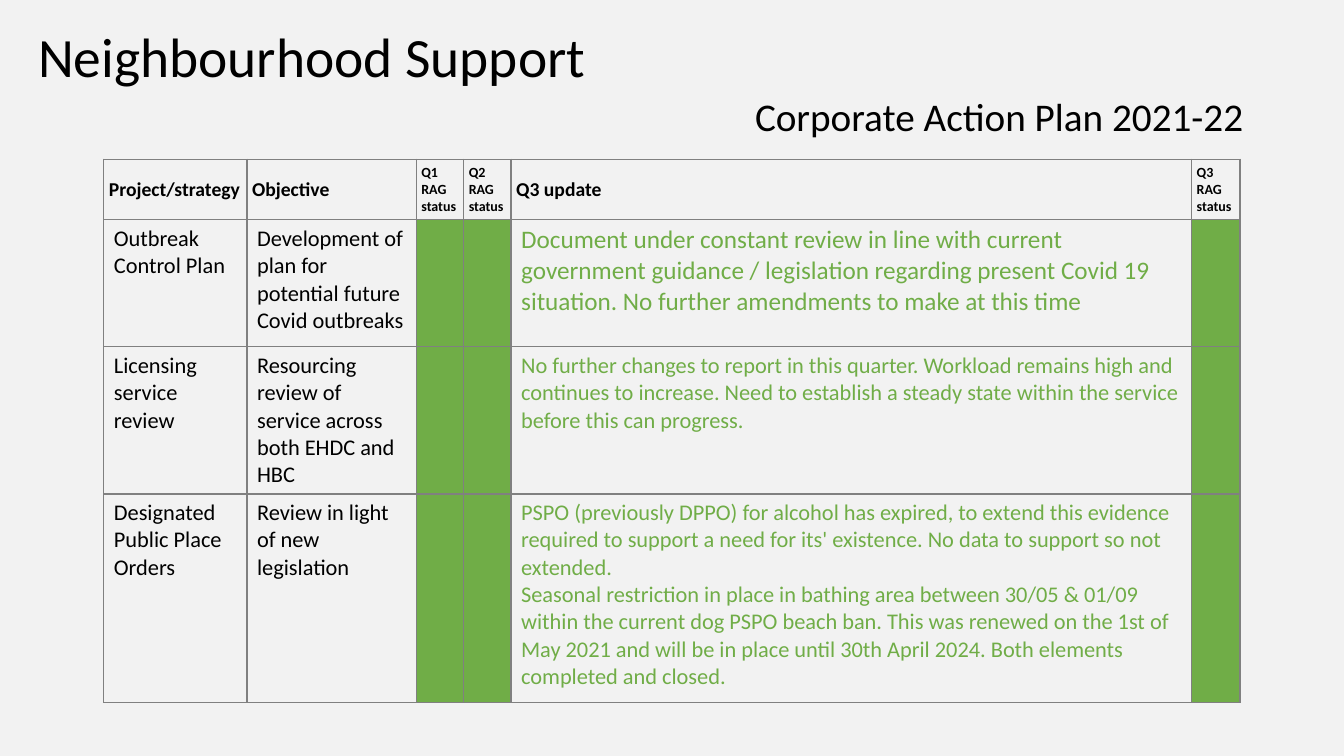
"""Build the Neighbourhood Support action plan slide."""
from lxml.etree import SubElement
from pptx import Presentation
from pptx.dml.color import RGBColor
from pptx.enum.text import MSO_ANCHOR
from pptx.oxml.ns import qn
from pptx.util import Inches, Pt

BLACK, GREEN, GREY, PALE = "000000", "70AD47", "808080", "F2F2F2"
COLUMN_WIDTHS = [1.42, 1.68, 0.47, 0.47, 6.75, 0.48]
ROW_HEIGHTS = [0.6, 1.26, 1.46, 2.07]
HEADINGS = [
    ("Project/strategy", 14), ("Objective", 14), ("Q1 RAG status", 10),
    ("Q2 RAG status", 10), ("Q3 update", 14), ("Q3 RAG status", 10),
]
PROJECTS = [
    ("Outbreak Control Plan",
     "Development of plan for potential future Covid outbreaks",
     ["Document under constant review in line with current government guidance / "
      "legislation regarding present Covid 19 situation. No further amendments to "
      "make at this time"], 18),
    ("Licensing service review",
     "Resourcing review of service across both EHDC and HBC",
     ["No further changes to report in this quarter. Workload remains high and "
      "continues to increase. Need to establish a steady state within the service "
      "before this can progress."], 16),
    ("Designated Public Place Orders",
     "Review in light of new legislation",
     ["PSPO (previously DPPO) for alcohol has expired, to extend this evidence "
      "required to support a need for its' existence. No data to support so not "
      "extended.",
      "Seasonal restriction in place in bathing area between 30/05 & 01/09 within "
      "the current dog PSPO beach ban. This was renewed on the 1st of May 2021 and "
      "will be in place until 30th April 2024. Both elements completed and closed."],
     16),
]


def color(value):
    return RGBColor.from_string(value)


class SlideBuilder:
    def __init__(self, slide, font):
        self.slide = slide
        self.font = font

    def background(self, value):
        fill = self.slide.background.fill
        fill.solid()
        fill.fore_color.rgb = color(value)

    def add_text(self, frame, lines, size, value=BLACK, bold=False, spacing=None):
        frame.word_wrap = True
        for index, line in enumerate(lines):
            para = frame.add_paragraph() if index else frame.paragraphs[0]
            para.line_spacing = spacing
            span = para.add_run()
            span.text = line
            span.font.name = self.font
            span.font.size = Pt(size)
            span.font.bold = bold
            span.font.color.rgb = color(value)

    def heading(self, text, left, top, width, height, size):
        box = self.slide.shapes.add_textbox(
            Inches(left), Inches(top), Inches(width), Inches(height))
        box.text_frame.vertical_anchor = MSO_ANCHOR.BOTTOM
        self.add_text(box.text_frame, [text], size, spacing=0.9)

    def table(self, left, top, widths, heights):
        frame = self.slide.shapes.add_table(
            len(heights), len(widths), Inches(left), Inches(top),
            Inches(sum(widths)), Inches(sum(heights)))
        table = frame.table
        table.first_row = table.horz_banding = False
        for column, width in zip(table.columns, widths):
            column.width = Inches(width)
        for row, height in zip(table.rows, heights):
            row.height = Inches(height)
        for cell in table.iter_cells():
            self.border(cell, GREY)
            cell.fill.background()
        return table

    def border(self, cell, value):
        properties = cell._tc.get_or_add_tcPr()
        for side in ("lnL", "lnR", "lnT", "lnB"):
            line = SubElement(properties, qn(f"a:{side}"), w=str(Pt(1)))
            fill = SubElement(line, qn("a:solidFill"))
            SubElement(fill, qn("a:srgbClr"), val=value)

    def header_cell(self, cell, text, size):
        cell.vertical_anchor = MSO_ANCHOR.MIDDLE
        cell.margin_left = cell.margin_right = Inches(0.05)
        cell.margin_top = cell.margin_bottom = Inches(0.05)
        self.add_text(cell.text_frame, [text], size, bold=True)

    def body_cell(self, cell, lines, size=16, value=BLACK):
        cell.margin_left = cell.margin_right = Inches(0.1)
        cell.margin_top = cell.margin_bottom = Inches(0.05)
        self.add_text(cell.text_frame, lines, size, value)

    def status_cell(self, cell, value):
        cell.fill.solid()
        cell.fill.fore_color.rgb = color(value)


def main():
    deck = Presentation()
    deck.slide_width, deck.slide_height = Inches(13.33), Inches(7.5)
    page = SlideBuilder(deck.slides.add_slide(deck.slide_layouts[6]), "Calibri")
    page.background(PALE)
    page.heading("Corporate Action Plan 2021-22", 7.39, 0.79, 6.66, 0.65, 28)
    page.heading("Neighbourhood Support", 0.28, 0.49, 6.15, 0.45, 39.6)

    plan = page.table(1.03, 1.58, COLUMN_WIDTHS, ROW_HEIGHTS)
    for column, (text, size) in enumerate(HEADINGS):
        page.header_cell(plan.cell(0, column), text, size)
    for row, (project, objective, update, size) in enumerate(PROJECTS, 1):
        page.body_cell(plan.cell(row, 0), [project])
        page.body_cell(plan.cell(row, 1), [objective])
        page.body_cell(plan.cell(row, 4), update, size, GREEN)
        for column in (2, 3, 5):
            page.status_cell(plan.cell(row, column), GREEN)

    deck.save("out.pptx")


if __name__ == "__main__":
    main()
